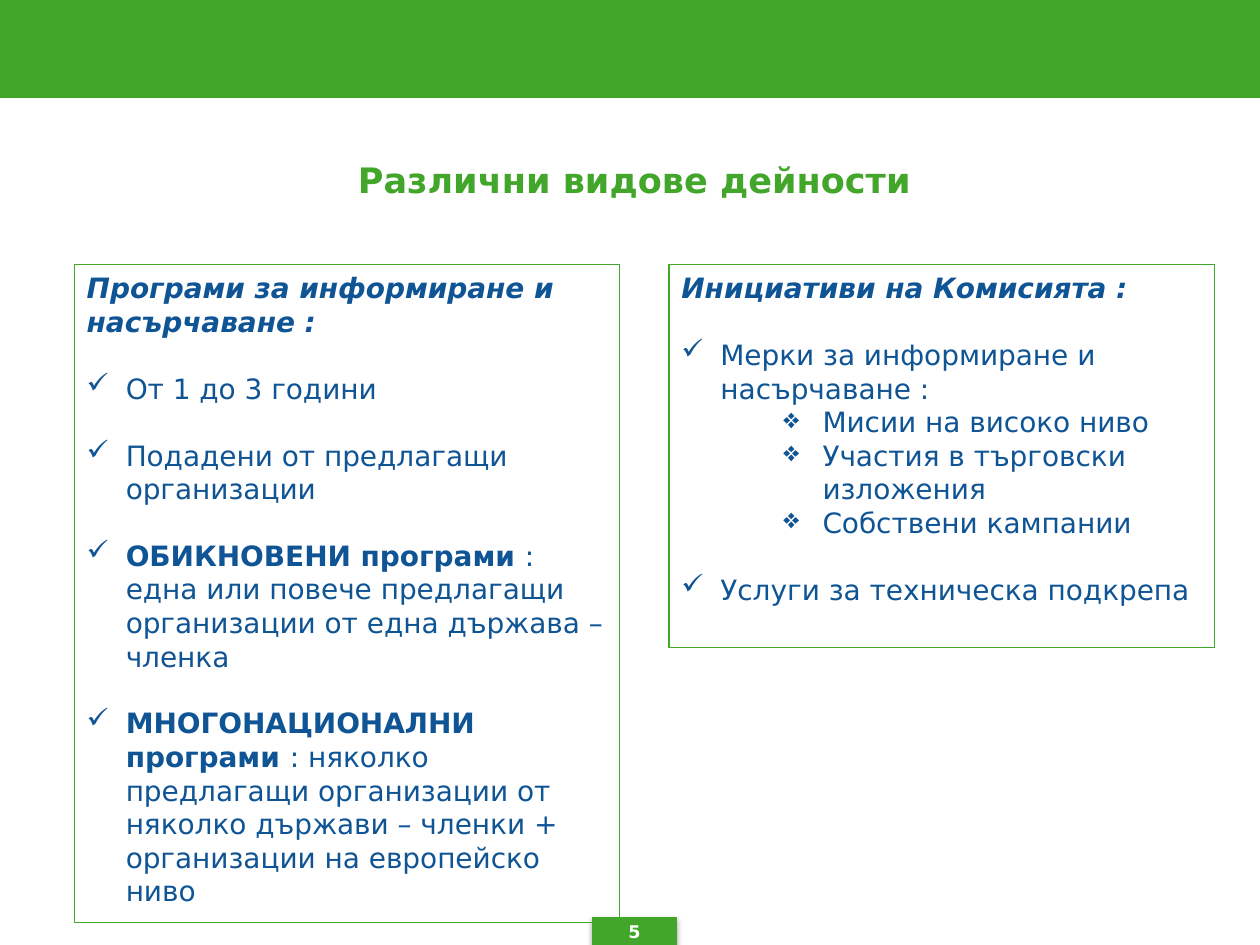
from dataclasses import dataclass

from lxml import etree
from pptx import Presentation
from pptx.dml.color import RGBColor
from pptx.enum.shapes import MSO_SHAPE
from pptx.enum.text import MSO_ANCHOR, MSO_AUTO_SIZE, PP_ALIGN
from pptx.oxml import parse_xml
from pptx.oxml.ns import nsdecls, qn
from pptx.util import Inches, Pt

RECT = MSO_SHAPE.RECTANGLE
TOP, MIDDLE = MSO_ANCHOR.TOP, MSO_ANCHOR.MIDDLE
LEFT, CENTER = PP_ALIGN.LEFT, PP_ALIGN.CENTER
FIXED = MSO_AUTO_SIZE.NONE
TITLE_ONLY = 5
SHADOW = (
    f'<a:effectLst {nsdecls("a")}><a:outerShdw blurRad="39370" dist="22860" '
    'dir="5400000" rotWithShape="0"><a:srgbClr val="000000">'
    '<a:alpha val="35000"/></a:srgbClr></a:outerShdw></a:effectLst>'
)


@dataclass
class Theme:
    face: str = "DejaVu Sans"
    green: RGBColor = RGBColor(0x42, 0xA6, 0x2A)
    blue: RGBColor = RGBColor(0x0F, 0x54, 0x94)
    white: RGBColor = RGBColor(0xFF, 0xFF, 0xFF)
    title: int = 20
    body: int = 16
    small: int = 10
    gap: int = 19
    line: float = 0.75


@dataclass
class Item:
    text: str
    lead: str = ""
    mark: str = "✓"
    left: float = 0.31
    gap: bool = True


class Page:
    def __init__(self, slide, theme):
        self.slide = slide
        self.theme = theme

    def style(self, par, size, color, bold=None, italic=None):
        font = par.font
        font.name, font.size = self.theme.face, Pt(size)
        font.color.rgb = color
        font.bold, font.italic = bold, italic

    def rect(self, *area, fill=True):
        shape = self.slide.shapes.add_shape(RECT, *map(Inches, area))
        shape.shadow.inherit = False
        if fill:
            shape.fill.solid()
            shape.fill.fore_color.rgb = self.theme.green
        else:
            shape.fill.background()
        shape.line.color.rgb = self.theme.green
        shape.line.width = Pt(self.theme.line)
        return shape

    def title(self, text, *area):
        shape = self.slide.shapes.title
        shape.left, shape.top, shape.width, shape.height = map(Inches, area)
        frame = shape.text_frame
        frame.text = text
        frame.vertical_anchor = MIDDLE
        par = frame.paragraphs[0]
        par.alignment = CENTER
        self.style(par, self.theme.title, self.theme.green, bold=True)

    def badge(self, *area):
        props = self.rect(*area)._element.spPr
        props.replace(props.find(qn("a:effectLst")), parse_xml(SHADOW))

    def label(self, text, *area):
        frame = self.slide.shapes.add_textbox(*map(Inches, area)).text_frame
        frame.word_wrap = True
        par = frame.paragraphs[0]
        par.text = text
        par.alignment = CENTER
        self.style(par, self.theme.small, self.theme.white, bold=True)

    def bullet(self, par, item):
        props = par._p.get_or_add_pPr()
        props.set("marL", str(Inches(item.left)))
        props.set("indent", str(Inches(-0.31)))
        etree.SubElement(props, qn("a:buChar"), char=item.mark)

    def panel(self, head, items, *area):
        frame = self.rect(*area, fill=False).text_frame
        frame.word_wrap = True
        frame.auto_size = FIXED
        frame.vertical_anchor = TOP
        par = frame.paragraphs[0]
        par.text = head
        par.alignment = LEFT
        self.style(par, self.theme.body, self.theme.blue, True, True)
        for item in items:
            par = frame.add_paragraph()
            par.alignment = LEFT
            self.bullet(par, item)
            if item.gap:
                par.space_before = Pt(self.theme.gap)
            if item.lead:
                run = par.add_run()
                run.text = item.lead
                run.font.bold = True
            par.add_run().text = item.text
            self.style(par, self.theme.body, self.theme.blue)


def sub(text):
    return Item(text, mark="❖", left=1.12, gap=False)


def main():
    deck = Presentation()
    deck.slide_width, deck.slide_height = Inches(10), Inches(7.5)
    page = Page(deck.slides.add_slide(deck.slide_layouts[TITLE_ONLY]), Theme())

    # Top band, title and page number
    page.rect(0, 0, 10, 0.77)
    page.badge(4.7, 7.28, 0.67, 0.22)
    page.title("Различни видове дейности", 0.34, 1.15, 9.39, 0.55)
    page.label("5", 4.69, 7.26, 0.69, 0.26)

    # Programmes
    page.panel("Програми за информиране и насърчаване :", [
        Item("От 1 до 3 години"),
        Item("Подадени от предлагащи организации"),
        Item(": една или повече предлагащи организации от една държава – членка",
             "ОБИКНОВЕНИ програми "),
        Item(": няколко предлагащи организации от няколко държави – членки + "
             "организации на европейско ниво", "МНОГОНАЦИОНАЛНИ програми "),
    ], 0.59, 2.1, 4.33, 5.22)

    # Commission initiatives
    page.panel("Инициативи на Комисията :", [
        Item("Мерки за информиране и насърчаване :"),
        sub("Мисии на високо ниво"),
        sub("Участия в търговски изложения"),
        sub("Собствени кампании"),
        Item("Услуги за техническа подкрепа"),
    ], 5.31, 2.1, 4.33, 3.04)

    deck.save("out.pptx")


if __name__ == "__main__":
    main()
